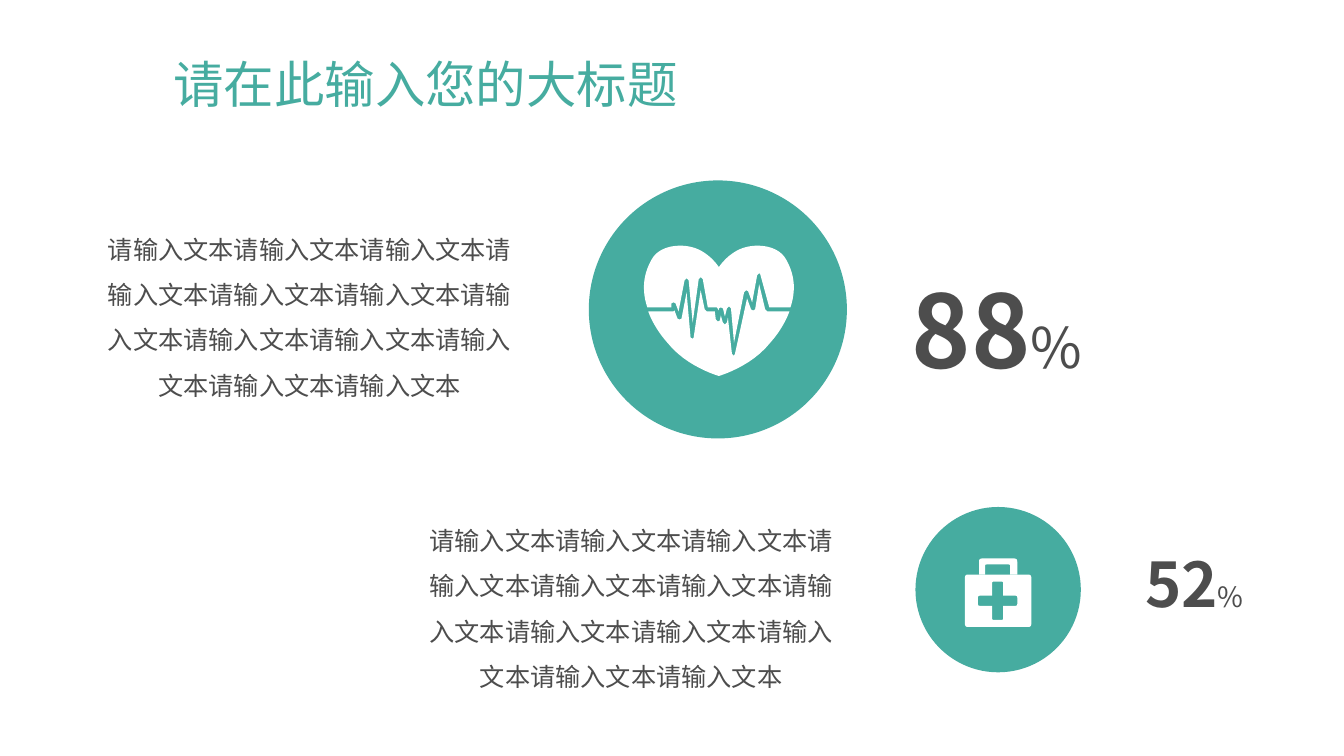
from lxml import etree
from pptx import Presentation
from pptx.dml.color import RGBColor
from pptx.enum.shapes import MSO_SHAPE
from pptx.enum.text import MSO_ANCHOR, MSO_AUTO_SIZE, PP_ALIGN
from pptx.oxml.ns import qn
from pptx.util import Inches, Pt

TEAL = RGBColor(0x46, 0xAC, 0xA0)
WHITE = RGBColor(0xFF, 0xFF, 0xFF)
GRAY = RGBColor(0x4D, 0x4D, 0x4D)
FONT = "Noto Sans CJK SC"
OVAL = MSO_SHAPE.OVAL
MIDDLE = MSO_ANCHOR.MIDDLE
LEFT, CENTER = PP_ALIGN.LEFT, PP_ALIGN.CENTER
NO_AUTOFIT, GROW = MSO_AUTO_SIZE.NONE, MSO_AUTO_SIZE.SHAPE_TO_FIT_TEXT

BODY_TEXT = "请输入文本" * 12
HEART_AXIS = 7.13
LOBE = [(7.13, 2.65), (7.13, 2.65), (7.04, 2.51), (6.89, 2.46),
        (6.74, 2.41), (6.53, 2.44), (6.46, 2.58),
        (6.37, 2.74), (6.37, 2.9), (6.42, 3.05)]
HEART_TIP = [(6.43, 3.09), (6.47, 3.2), (6.54, 3.31), (6.62, 3.4),
             (6.81, 3.64), (7.13, 3.73), (7.13, 3.73)]
PULSE_ABOVE = [
    (6.66, 3.05), (6.66, 3.01), (6.68, 3), (6.7, 3.01), (6.73, 3.09),
    (6.79, 2.78), (6.81, 2.76), (6.83, 2.78), (6.87, 3.2), (6.93, 2.77),
    (6.95, 2.75), (6.97, 2.77), (7.02, 3.05), (7.11, 3.05), (7.13, 3.08),
    (7.13, 3.06), (7.15, 3.05), (7.17, 3.06), (7.19, 3.14), (7.21, 3.06),
    (7.23, 3.04), (7.25, 3.06), (7.28, 3.4), (7.38, 2.9), (7.4, 2.88),
    (7.42, 2.89), (7.46, 3), (7.51, 2.73), (7.53, 2.71), (7.54, 2.72),
    (7.63, 3.05)]
PULSE_BELOW = [
    (7.61, 3.09), (7.59, 3.07), (7.53, 2.82), (7.49, 3.07), (7.47, 3.08),
    (7.45, 3.07), (7.41, 2.96), (7.29, 3.51), (7.28, 3.53), (7.26, 3.51),
    (7.22, 3.15), (7.21, 3.2), (7.19, 3.22), (7.17, 3.2), (7.15, 3.13),
    (7.14, 3.18), (7.12, 3.19), (7.1, 3.17), (7.09, 3.09), (7.01, 3.09),
    (6.99, 3.07), (6.95, 2.88), (6.88, 3.35), (6.87, 3.36), (6.85, 3.35),
    (6.81, 2.9), (6.76, 3.16), (6.74, 3.17), (6.72, 3.16), (6.69, 3.08),
    (6.68, 3.09)]


def bezier(controls, steps=12):
    """Sample a chain of cubic curves that share their end points."""
    points = [controls[0]]
    for i in range(0, len(controls) - 1, 3):
        for step in range(1, steps + 1):
            t = step / steps
            weights = ((1 - t) ** 3, 3 * t * (1 - t) ** 2,
                       3 * t ** 2 * (1 - t), t ** 3)
            points.append(tuple(
                sum(w * p[axis] for w, p in zip(weights, controls[i:i + 4]))
                for axis in (0, 1)))
    return points


def mirror(points):
    return [(2 * HEART_AXIS - x, y) for x, y in reversed(points)]


def rounded(corners):
    """Outline of right-angled corners, each given as x, y, radius."""
    points = []
    for i, (x, y, radius) in enumerate(corners):
        if not radius:
            points.append((x, y))
            continue
        ends = []
        for nx, ny, _ in (corners[i - 1], corners[(i + 1) % len(corners)]):
            share = radius / (abs(nx - x) + abs(ny - y))
            ends.append((x + (nx - x) * share, y + (ny - y) * share))
        points += bezier([ends[0], (x, y), (x, y), ends[1]], 6)
    return points


def box(left, top, right, bottom, radius):
    return rounded([(left, top, radius), (right, top, radius),
                    (right, bottom, radius), (left, bottom, radius)])


def paint(shape, color):
    shape.fill.solid()
    shape.fill.fore_color.rgb = color
    shape.line.fill.background()
    shape.shadow.inherit = False


def add_disc(shapes, left, top, size):
    paint(shapes.add_shape(OVAL, Inches(left), Inches(top),
                           Inches(size), Inches(size)), TEAL)


def add_outline(shapes, *contours):
    """White freeform; contours after the first cut holes."""
    scaled = [[(Inches(x), Inches(y)) for x, y in c] for c in contours]
    builder = shapes.build_freeform(*scaled[0][0])
    builder.add_line_segments(scaled[0][1:])
    for hole in scaled[1:]:
        builder.move_to(*hole[0])
        builder.add_line_segments(hole[1:])
    paint(builder.convert_to_shape(), WHITE)


def add_heart_icon(slide):
    shapes = slide.shapes.add_group_shape().shapes
    add_disc(shapes, 5.84, 1.79, 2.56)
    lobe, tip = bezier(LOBE), bezier(HEART_TIP)
    add_outline(shapes, PULSE_ABOVE + mirror(lobe) + lobe)
    add_outline(shapes, PULSE_BELOW + tip + mirror(tip))


def add_first_aid_icon(slide):
    shapes = slide.shapes.add_group_shape().shapes
    add_disc(shapes, 9.08, 5.03, 1.64)
    add_outline(shapes, rounded([
        (9.71, 5.7, 0), (9.71, 5.54, 0.06), (10.09, 5.54, 0.06),
        (10.09, 5.7, 0), (10.02, 5.7, 0), (10.02, 5.6, 0.03),
        (9.77, 5.6, 0.03), (9.77, 5.7, 0)]))
    r = 0.03
    cross = rounded([
        (9.84, 5.77, r), (9.95, 5.77, r), (9.95, 5.91, 0), (10.09, 5.91, r),
        (10.09, 6.01, r), (9.95, 6.01, 0), (9.95, 6.15, r), (9.84, 6.15, r),
        (9.84, 6.01, 0), (9.7, 6.01, r), (9.7, 5.91, r), (9.84, 5.91, 0)])
    add_outline(shapes, box(9.57, 5.7, 10.23, 6.22, 0.06), cross)


def format_paragraph(paragraph, color, align, spacing=None, size=None):
    paragraph.alignment = align
    paragraph.line_spacing = spacing
    font = paragraph.font
    font.name = FONT
    font.color.rgb = color
    if size:
        font.size = Pt(size)
    defaults = paragraph._p.get_or_add_pPr().find(qn("a:defRPr"))
    etree.SubElement(defaults, qn("a:ea")).set("typeface", FONT)


def add_title(slide, text):
    title = slide.shapes.title
    title.left, title.top = Inches(1.62), Inches(0.4)
    title.width, title.height = Inches(10.88), Inches(0.93)
    frame = title.text_frame
    frame.text = text
    frame.vertical_anchor = MIDDLE
    frame.auto_size = NO_AUTOFIT
    format_paragraph(frame.paragraphs[0], TEAL, LEFT, 0.9, 36)


def add_text_frame(slide, left, top, width, height):
    frame = slide.shapes.add_textbox(Inches(left), Inches(top),
                                     Inches(width), Inches(height)).text_frame
    frame.word_wrap = True
    return frame


def add_percentage(slide, place, number, number_size, sign_size):
    frame = add_text_frame(slide, *place)
    frame.auto_size = GROW
    paragraph = frame.paragraphs[0]
    for text, size, bold in ((number, number_size, True),
                             ("%", sign_size, False)):
        run = paragraph.add_run()
        run.text = text
        run.font.size = Pt(size)
        run.font.bold = bold
    format_paragraph(paragraph, GRAY, CENTER)


def add_description(slide, left, top):
    frame = add_text_frame(slide, left, top, 4.44, 1.94)
    frame.text = BODY_TEXT
    frame.vertical_anchor = MIDDLE
    format_paragraph(frame.paragraphs[0], GRAY, CENTER, 1.5, 18)


def main():
    deck = Presentation()
    deck.slide_width, deck.slide_height = Inches(13.33), Inches(7.5)
    slide = deck.slides.add_slide(deck.slide_layouts[5])
    add_title(slide, "请在此输入您的大标题")
    add_heart_icon(slide)
    add_first_aid_icon(slide)
    add_percentage(slide, (8.61, 2.61, 2.56, 1.31), "88", 72, 40)
    add_percentage(slide, (10.85, 5.37, 1.99, 0.84), "52", 44, 20)
    add_description(slide, 0.85, 2.1)
    add_description(slide, 4.04, 4.99)
    deck.save("out.pptx")


if __name__ == "__main__":
    main()
